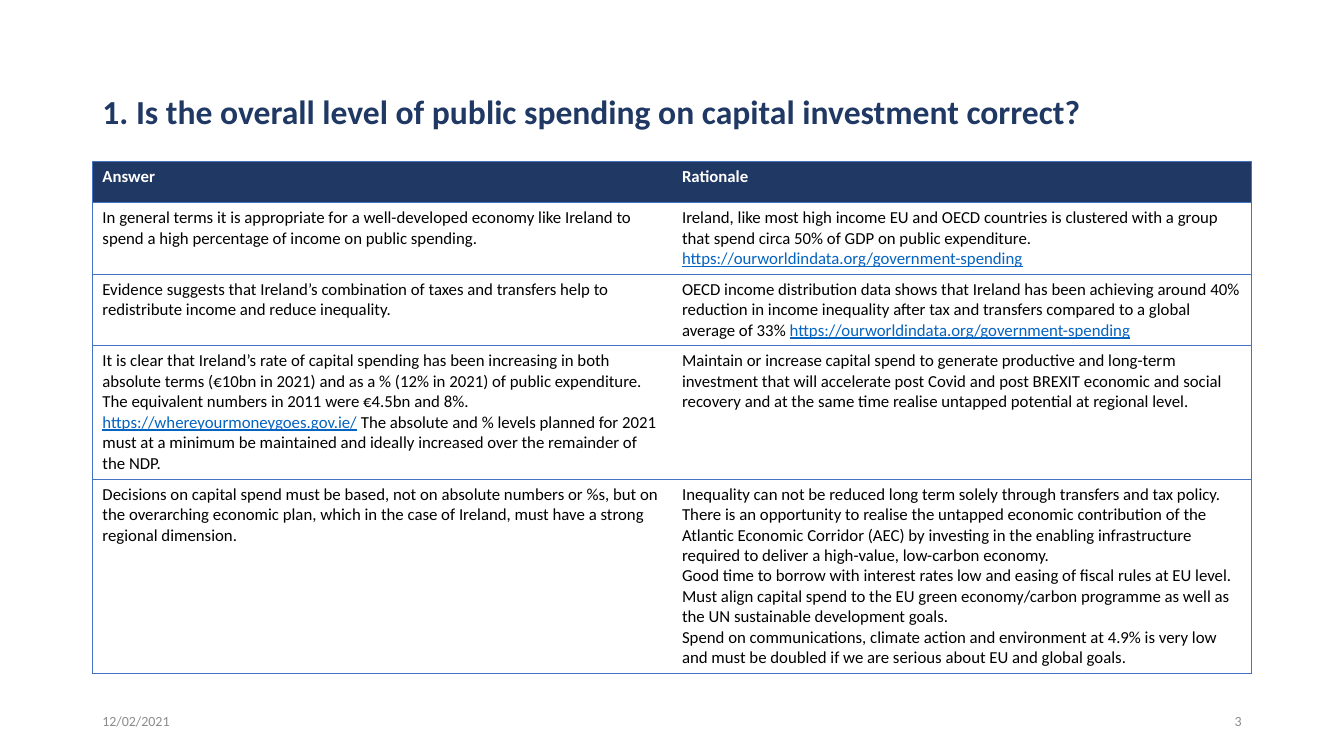
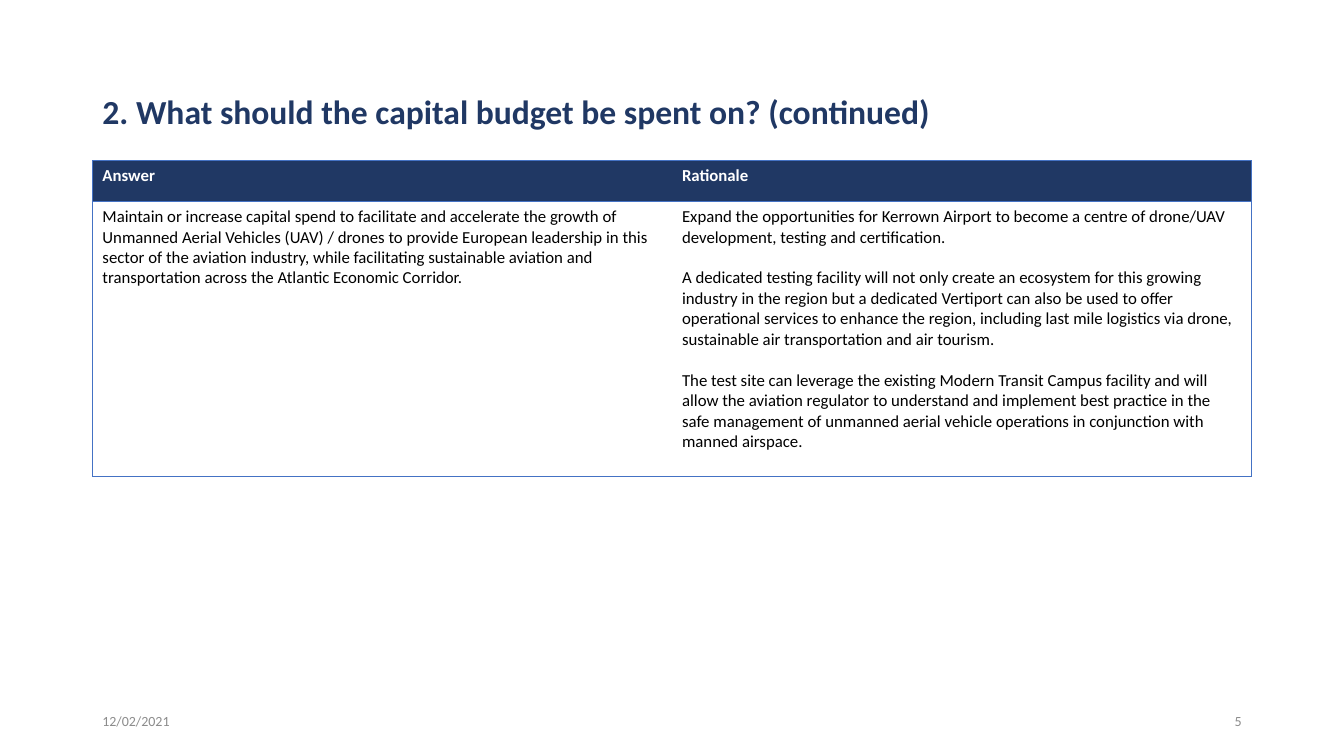
from lxml import etree
from pptx import Presentation
from pptx.dml.color import RGBColor
from pptx.enum.text import MSO_ANCHOR, MSO_AUTO_SIZE, PP_ALIGN
from pptx.oxml.ns import qn
from pptx.util import Pt

# Shared format
PX = 9525  # EMU in one px, 96 px to the inch
SLIDE_W, SLIDE_H = 1280, 720
LEFT, WIDTH = 88, 1104
FONT = "Calibri"
COLORS = {
    "navy": "203864", "white": "FFFFFF", "text": "000000",
    "link": "0563C1", "rule": "4472C4", "footer": "8C8C8C",
}
STYLES = {
    "title": {"size": Pt(24), "bold": True, "color": "navy"},
    "header": {"size": Pt(12), "bold": True, "color": "white"},
    "body": {"size": Pt(12), "bold": False, "color": "text"},
    "link": {"size": Pt(12), "underline": True, "color": "link"},
    "footer": {"size": Pt(10), "color": "footer"},
}
DATE = "12/02/2021"
HEADINGS = ("Answer", "Rationale")
HEADER_H = 39

# A cell is a list of paragraphs; "|" parts the runs of a paragraph
QUESTIONS = [
    {
        "title": "1. Is the overall level of public spending on capital investment correct?",
        "number": "3",
        "table_top": 154,
        "row_heights": [68, 68, 127, 185],
        "paragraph_gap": 0,
        "rows": [
            (["In general terms it is appropriate for a well-developed economy like Ireland to "
              "spend a high percentage of income on public spending."],
             ["Ireland, like most high income EU and OECD countries is clustered with a group "
              "that spend circa 50% of GDP on public expenditure. "
              "|https://ourworldindata.org/government-spending"]),
            (["Evidence suggests that Ireland’s combination of taxes and transfers help to "
              "redistribute income and reduce inequality."],
             ["OECD income distribution data shows that Ireland has been achieving around 40% "
              "reduction in income inequality after tax and transfers compared to a global "
              "average of 33% |https://ourworldindata.org/government-spending"]),
            (["It is clear that Ireland’s rate of capital spending has been increasing in both "
              "absolute terms (€10bn in 2021) and as a % (12% in 2021) of public expenditure. "
              "The equivalent numbers in 2011 were €4.5bn and 8%. "
              "|https://whereyourmoneygoes.gov.ie/| The absolute and % levels planned for "
              "2021 must at a minimum be maintained and ideally increased over the "
              "remainder of the NDP."],
             ["Maintain or increase capital spend to generate productive and long-term "
              "investment that will accelerate post Covid and post BREXIT economic and social "
              "recovery and at the same time realise untapped potential at regional level."]),
            (["Decisions on capital spend must be based, not on absolute numbers or %s, but on "
              "the overarching economic plan, which in the case of Ireland, must have a strong "
              "regional dimension."],
             ["Inequality can not be reduced long term solely through transfers and tax policy.",
              "There is an opportunity to realise the untapped economic contribution of the "
              "Atlantic Economic Corridor (AEC) by investing in the enabling infrastructure "
              "required to deliver a high-value, low-carbon economy.",
              "Good time to borrow with interest rates low and easing of fiscal rules at EU level.",
              "Must align capital spend to the EU green economy/carbon programme as well as "
              "the UN sustainable development goals.",
              "Spend on communications, climate action and environment at 4.9% is very low "
              "and must be doubled if we are serious about EU and global goals."]),
        ],
    },
    {
        "title": "2. What should the capital budget be spent on? (continued)",
        "number": "5",
        "table_top": 153,
        "row_heights": [262],
        "paragraph_gap": 14.6,
        "rows": [
            (["Maintain or increase capital spend to facilitate and accelerate the growth of "
              "Unmanned Aerial Vehicles (UAV) / drones to provide European leadership in this "
              "sector of the aviation industry, while facilitating sustainable aviation and "
              "transportation across the Atlantic Economic Corridor."],
             ["Expand the opportunities for Kerrown Airport to become a centre of drone/UAV "
              "development, testing and certification.",
              "A dedicated testing facility will not only create an ecosystem for this growing "
              "industry in the region but a dedicated Vertiport can also be used to offer "
              "operational services to enhance the region, including last mile logistics via "
              "drone, sustainable air transportation and air tourism.",
              "The test site can leverage the existing Modern Transit Campus facility and will "
              "allow the aviation regulator to understand and implement best practice in the "
              "safe management of unmanned aerial vehicle operations in conjunction with "
              "manned airspace."]),
        ],
    },
]


def emu(*lengths):
    return [length * PX for length in lengths]


def rgb(name):
    return RGBColor.from_string(COLORS[name])


def add_run(paragraph, text, style):
    run = paragraph.add_run()
    run.text = text
    run.font.name = FONT
    for key, value in STYLES[style].items():
        if key == "color":
            run.font.color.rgb = rgb(value)
        else:
            setattr(run.font, key, value)


# Title
def add_title(slide, text, box):
    title = slide.shapes.title
    for side, length in zip(("left", "top", "width", "height"), emu(*box)):
        setattr(title, side, length)
    frame = title.text_frame
    frame.word_wrap = True
    frame.auto_size = MSO_AUTO_SIZE.NONE
    frame.vertical_anchor = MSO_ANCHOR.MIDDLE
    line = frame.paragraphs[0]
    line.alignment = PP_ALIGN.LEFT
    line.line_spacing = 0.9
    add_run(line, text, "title")


# Date and slide number
def add_footer(slide, number, box):
    left, top, width, height = box
    part_w = 288
    parts = [(DATE, left, PP_ALIGN.LEFT), (number, left + width - part_w, PP_ALIGN.RIGHT)]
    for text, part_left, alignment in parts:
        frame = slide.shapes.add_textbox(*emu(part_left, top, part_w, height)).text_frame
        frame.word_wrap = True
        frame.vertical_anchor = MSO_ANCHOR.MIDDLE
        frame.paragraphs[0].alignment = alignment
        add_run(frame.paragraphs[0], text, "footer")


# Table of answers and rationales
def set_borders(cell, drawn):
    """Rule the sides named in drawn and clear the others."""
    properties = cell._tc.get_or_add_tcPr()
    for index, side in enumerate("LRTB"):
        border = etree.Element(qn(f"a:ln{side}"), w=str(Pt(0.5)))
        if side in drawn:
            fill = etree.SubElement(border, qn("a:solidFill"))
            etree.SubElement(fill, qn("a:srgbClr"), val=COLORS["rule"])
        else:
            etree.SubElement(border, qn("a:noFill"))
        properties.insert(index, border)


def fill_cell(cell, paragraphs, style, gap):
    frame = cell.text_frame
    for index, text in enumerate(paragraphs):
        paragraph = frame.add_paragraph() if index else frame.paragraphs[0]
        if index and gap:
            paragraph.space_before = Pt(gap)
        for part in text.split("|"):
            add_run(paragraph, part, "link" if part.startswith("https://") else style)


def add_answers(slide, rows, heights, gap, box):
    left, top, width = box
    all_rows = [[[heading] for heading in HEADINGS], *rows]
    all_heights = [HEADER_H, *heights]
    table = slide.shapes.add_table(
        len(all_rows), len(HEADINGS), *emu(left, top, width, sum(all_heights))).table
    table.first_row = table.horz_banding = False
    for row, height in zip(table.rows, all_heights):
        row.height = height * PX
    for r, cells in enumerate(all_rows):
        for c, paragraphs in enumerate(cells):
            cell = table.cell(r, c)
            if r == 0:
                cell.fill.solid()
                cell.fill.fore_color.rgb = rgb("navy")
            else:
                cell.fill.background()
            set_borders(cell, "TB" + "LR"[c])
            fill_cell(cell, paragraphs, "body" if r else "header", gap)


# Whole slide
def add_question_slide(deck, question):
    slide = deck.slides.add_slide(deck.slide_layouts[5])
    add_title(slide, question["title"], (LEFT, 39, WIDTH, 139))
    add_answers(slide, question["rows"], question["row_heights"],
                question["paragraph_gap"], (LEFT, question["table_top"], WIDTH))
    add_footer(slide, question["number"], (LEFT, 668, WIDTH, 38))


def main():
    deck = Presentation()
    deck.slide_width, deck.slide_height = emu(SLIDE_W, SLIDE_H)
    for question in QUESTIONS:
        add_question_slide(deck, question)
    deck.save("out.pptx")


if __name__ == "__main__":
    main()
